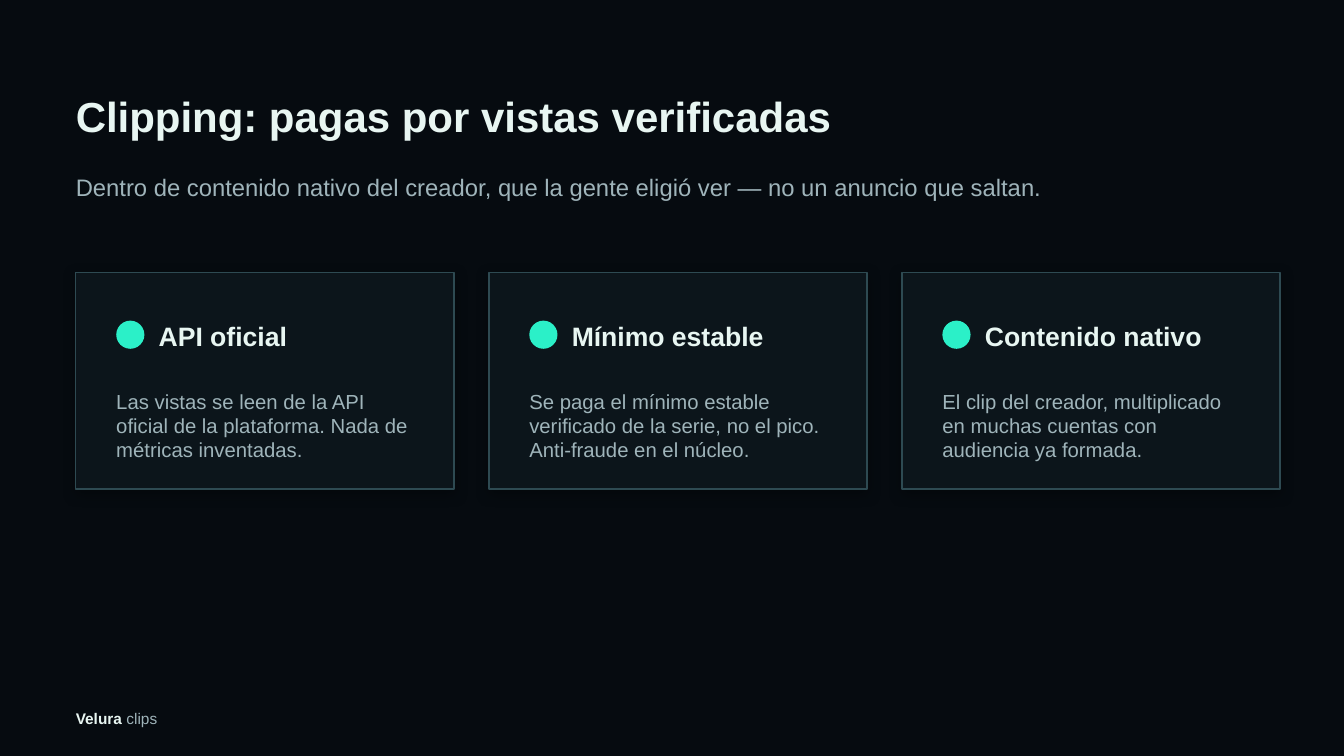
"""Build the slide on paying for verified clip views."""
import pptx
import pptx.dml.color
import pptx.enum.shapes
import pptx.enum.text
import pptx.oxml
import pptx.oxml.ns
import pptx.util
from dataclasses import dataclass

TITLE = "Clipping: pagas por vistas verificadas"
SUBTITLE = "Dentro de contenido nativo del creador, que la gente eligió ver — no un anuncio que saltan."
FOOTER = ("Velura", " clips")
CARDS = [
    ("API oficial", "Las vistas se leen de la API oficial de la plataforma. Nada de métricas inventadas."),
    ("Mínimo estable", "Se paga el mínimo estable verificado de la serie, no el pico. Anti-fraude en el núcleo."),
    ("Contenido nativo", "El clip del creador, multiplicado en muchas cuentas con audiencia ya formada."),
]


@dataclass(frozen=True)
class Theme:
    """Colours, font and type sizes."""
    background: str = "060B10"
    card: str = "0C151B"
    border: str = "2E4A52"
    accent: str = "2BF0C8"
    bright: str = "E8F6F2"
    muted: str = "9FB4BA"
    font: str = "Arial"
    title: float = 30
    subtitle: float = 17
    heading: float = 19
    body: float = 14.5
    footer: float = 11


THEME = Theme()
Cm = pptx.util.Cm
MARGIN = 1.91
CONTENT_WIDTH = 29.97
CARD_TOP, CARD_WIDTH, CARD_HEIGHT, CARD_GAP = 6.86, 9.53, 5.46, 0.88
CARD_PADDING = 1.02
DOT_SIZE = 0.71


def rgb(color):
    """Return the colour object for a hex string."""
    return pptx.dml.color.RGBColor.from_string(color)


def add_text(slide, text, left, top, width, height, size, color, bold=False):
    """Add a middle-anchored text box without margins and return its paragraph."""
    frame = slide.shapes.add_textbox(Cm(left), Cm(top), Cm(width), Cm(height)).text_frame
    frame.word_wrap = True
    frame.vertical_anchor = pptx.enum.text.MSO_ANCHOR.MIDDLE
    frame.margin_left = frame.margin_right = frame.margin_top = frame.margin_bottom = 0
    paragraph = frame.paragraphs[0]
    paragraph.font.name = THEME.font
    paragraph.font.size = pptx.util.Pt(size)
    paragraph.font.bold = bold
    paragraph.font.color.rgb = rgb(color)
    paragraph.add_run().text = text
    return paragraph


def add_filled_shape(slide, kind, left, top, width, height, color):
    """Add a flat shape without outline."""
    shape = slide.shapes.add_shape(kind, Cm(left), Cm(top), Cm(width), Cm(height))
    shape.shadow.inherit = False
    shape.fill.solid()
    shape.fill.fore_color.rgb = rgb(color)
    shape.line.fill.background()
    return shape


def add_soft_shadow(shape):
    """Give a shape a soft black shadow below it."""
    shadow = pptx.oxml.parse_xml(
        f'<a:outerShdw {pptx.oxml.ns.nsdecls("a")} blurRad="{pptx.util.Pt(10)}" '
        f'dist="{pptx.util.Pt(3)}" dir="5400000" algn="bl" rotWithShape="0">'
        '<a:srgbClr val="000000"><a:alpha val="35000"/></a:srgbClr></a:outerShdw>')
    shape.element.spPr.find(pptx.oxml.ns.qn("a:effectLst")).append(shadow)


def add_card(slide, left, heading, body):
    """Add a card with its dot, heading and body."""
    kinds = pptx.enum.shapes.MSO_SHAPE
    card = add_filled_shape(slide, kinds.RECTANGLE, left, CARD_TOP, CARD_WIDTH, CARD_HEIGHT, THEME.card)
    card.line.color.rgb = rgb(THEME.border)
    card.line.width = pptx.util.Pt(1)
    add_soft_shadow(card)
    inner = left + CARD_PADDING
    add_filled_shape(slide, kinds.OVAL, inner, CARD_TOP + 1.22, DOT_SIZE, DOT_SIZE, THEME.accent)
    add_text(slide, heading, inner + 1.07, CARD_TOP + 0.96, 6.6, 1.27, THEME.heading, THEME.bright, bold=True)
    add_text(slide, body, inner, CARD_TOP + 2.59, 7.62, 2.54, THEME.body, THEME.muted)


def main():
    """Create and save the presentation."""
    presentation = pptx.Presentation()
    presentation.slide_width, presentation.slide_height = Cm(33.87), Cm(19.05)
    slide = presentation.slides.add_slide(presentation.slide_layouts[6])
    slide.background.fill.solid()
    slide.background.fill.fore_color.rgb = rgb(THEME.background)

    brand, suffix = FOOTER
    footer = add_text(slide, brand, MARGIN, 17.65, 7.62, 0.89, THEME.footer, THEME.muted)
    footer.runs[0].font.bold = True
    footer.runs[0].font.color.rgb = rgb(THEME.bright)
    footer.add_run().text = suffix

    add_text(slide, TITLE, MARGIN, 1.78, CONTENT_WIDTH, 2.29, THEME.title, THEME.bright, bold=True)
    add_text(slide, SUBTITLE, MARGIN, 3.94, CONTENT_WIDTH, 1.52, THEME.subtitle, THEME.muted)
    for index, (heading, body) in enumerate(CARDS):
        add_card(slide, MARGIN + index * (CARD_WIDTH + CARD_GAP), heading, body)
    presentation.save("out.pptx")


if __name__ == "__main__":
    main()
